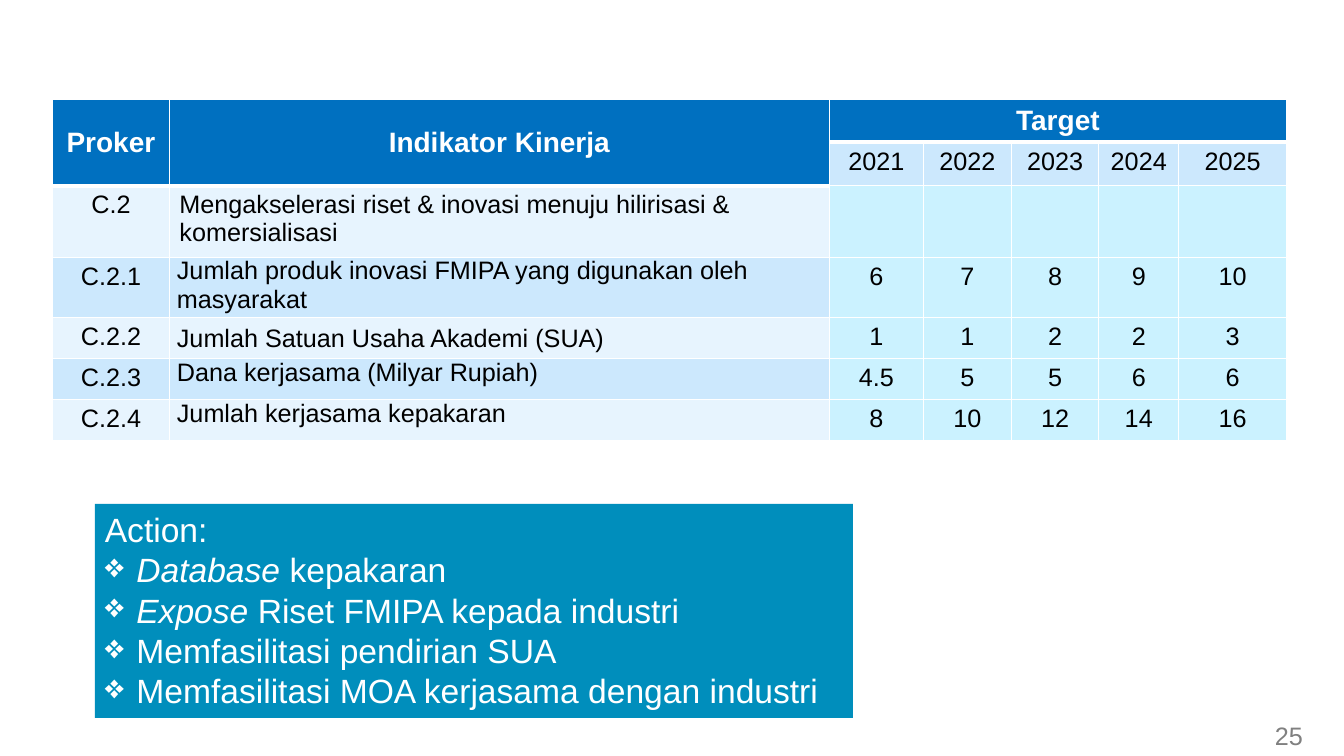
import pptx
import pptx.util
import pptx.dml.color
import pptx.enum.shapes
import pptx.enum.text
import pptx.oxml.ns
import lxml.etree

Pt = pptx.util.Pt
ALIGN = pptx.enum.text.PP_ALIGN
ANCHOR = pptx.enum.text.MSO_ANCHOR

FONT = "Arial"
COLORS = {
    "head": "0070C0", "dark": "CCE8FD", "light": "E7F4FE", "value": "CBF2FF",
    "action": "008EBC", "white": "FFFFFF", "black": "000000", "gray": "808080",
}
ROWS = [
    ["Proker", "Indikator Kinerja", "Target", "", "", "", ""],
    ["", "", "2021", "2022", "2023", "2024", "2025"],
    ["C.2", "Mengakselerasi riset & inovasi menuju hilirisasi & komersialisasi",
     "", "", "", "", ""],
    ["C.2.1", "Jumlah produk inovasi FMIPA yang digunakan oleh masyarakat",
     "6", "7", "8", "9", "10"],
    ["C.2.2", "Jumlah Satuan Usaha Akademi (SUA)", "1", "1", "2", "2", "3"],
    ["C.2.3", "Dana kerjasama (Milyar Rupiah)", "4.5", "5", "5", "6", "6"],
    ["C.2.4", "Jumlah kerjasama kepakaran", "8", "10", "12", "14", "16"],
]
WIDTHS = [83.5, 471.5, 67, 63, 62.5, 57, 77]
HEIGHTS = [30.5, 31, 51, 43.2, 29.2, 29.2, 29.2]
MERGES = [(0, 0, 1, 0), (0, 1, 1, 1), (0, 2, 0, 6)]
# Each action is an italic part and a plain part
ACTIONS = [
    ("Database ", "kepakaran"),
    ("Expose ", "Riset FMIPA kepada industri"),
    ("", "Memfasilitasi pendirian SUA"),
    ("", "Memfasilitasi MOA kerjasama dengan industri"),
]
PAGE = "25"


def rgb(name):
    return pptx.dml.color.RGBColor.from_string(COLORS[name])


def style(font, size, color, bold=False):
    font.name, font.size, font.bold = FONT, Pt(size), bold
    font.color.rgb = rgb(color)


def add_node(parent, tag, **attrs):
    node = lxml.etree.SubElement(parent, pptx.oxml.ns.qn(tag))
    for key, value in attrs.items():
        node.set(key, str(value))
    return node


def is_head(row, col):
    return row == 0 or (row == 1 and col < 2)


def rule(row, col):
    """Width of the line below a cell: thick where the heading ends."""
    ends = (row == 0 and col > 1) or (row == 1 and col < 2)
    return 3 if ends else 1


def draw_edges(cell, row, col):
    props = cell._tc.get_or_add_tcPr()
    sides = {"L": 1, "R": 1, "T": rule(row - 1, col), "B": rule(row, col)}
    for side, width in sides.items():
        line = add_node(props, "a:ln" + side, w=int(Pt(width)))
        add_node(add_node(line, "a:solidFill"), "a:srgbClr", val=COLORS["white"])


def fill_cell(cell, row, col):
    head = is_head(row, col)
    task = col == 1 and row > 2
    draw_edges(cell, row, col)
    if head:
        shade = "head"
    elif row > 1 and col > 1:
        shade = "value"
    else:
        shade = "dark" if row % 2 else "light"
    cell.fill.solid()
    cell.fill.fore_color.rgb = rgb(shade)
    cell.margin_left = cell.margin_right = Pt(5.4 if task else 7.2)
    cell.margin_top = cell.margin_bottom = Pt(0 if task else 3.6)
    middle = (head and col < 2) or (task and row == 4)
    cell.vertical_anchor = ANCHOR.MIDDLE if middle else ANCHOR.TOP
    if not ROWS[row][col]:
        return
    cell.text_frame.text = ROWS[row][col]
    para = cell.text_frame.paragraphs[0]
    para.alignment = ALIGN.LEFT if col == 1 and not head else ALIGN.CENTER
    if task:
        para.space_after = Pt(6)
        if middle:
            para.line_spacing = 1.07
    style(para.runs[0].font, 20 if head else 18, "white" if head else "black", head)


def add_targets(slide):
    frame = slide.shapes.add_table(len(ROWS), len(WIDTHS), Pt(37.5), Pt(71.2),
                                   Pt(sum(WIDTHS)), Pt(sum(HEIGHTS)))
    table = frame.table
    for col, width in enumerate(WIDTHS):
        table.columns[col].width = Pt(width)
    for row, height in enumerate(HEIGHTS):
        table.rows[row].height = Pt(height)
        for col in range(len(WIDTHS)):
            fill_cell(table.cell(row, col), row, col)
    for top, left, bottom, right in MERGES:
        table.cell(top, left).merge(table.cell(bottom, right))


def add_actions(slide):
    box = slide.shapes.add_shape(pptx.enum.shapes.MSO_SHAPE.RECTANGLE,
                                 Pt(67.8), Pt(360), Pt(541.5), Pt(152.8))
    box.shadow.inherit = False
    box.fill.solid()
    box.fill.fore_color.rgb = rgb("action")
    box.line.fill.background()
    frame = box.text_frame
    frame.word_wrap = False
    frame.vertical_anchor = ANCHOR.TOP
    frame.text = "Action:"
    for parts in ACTIONS:
        para = frame.add_paragraph()
        props = para._p.get_or_add_pPr()
        props.set("marL", str(int(Pt(22.5))))
        props.set("indent", str(int(Pt(-22.5))))
        add_node(props, "a:buChar", char="❖")
        for part, slant in zip(parts, (True, False)):
            if part:
                run = para.add_run()
                run.text = part
                run.font.italic = slant
    for para in frame.paragraphs:
        para.alignment = ALIGN.LEFT
        for run in para.runs:
            style(run.font, 24, "white")


def add_page(slide):
    box = slide.shapes.add_textbox(Pt(903.6), Pt(511.2), Pt(39.6), Pt(28.8))
    box.text_frame.word_wrap = True
    box.text_frame.text = PAGE
    style(box.text_frame.paragraphs[0].runs[0].font, 18, "gray")


def main():
    deck = pptx.Presentation()
    deck.slide_width, deck.slide_height = Pt(960), Pt(540)
    slide = deck.slides.add_slide(deck.slide_layouts[6])
    add_targets(slide)
    add_actions(slide)
    add_page(slide)
    deck.save("out.pptx")


if __name__ == "__main__":
    main()
